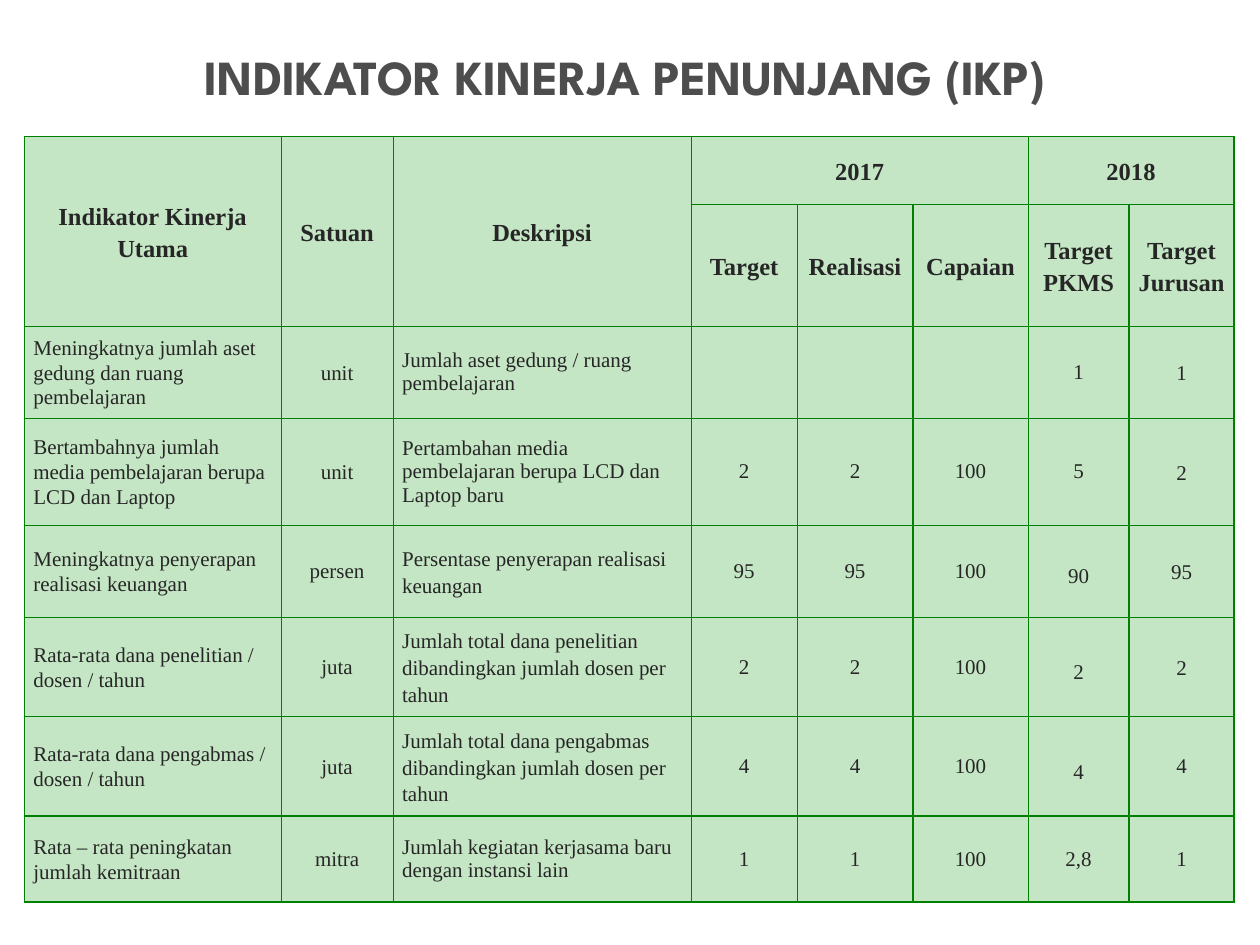
from dataclasses import dataclass

from lxml import etree
from pptx import Presentation
from pptx.dml.color import RGBColor
from pptx.enum.text import MSO_ANCHOR, PP_ALIGN
from pptx.oxml.ns import qn
from pptx.util import Pt

LEFT, CENTER = PP_ALIGN.LEFT, PP_ALIGN.CENTER
MIDDLE = MSO_ANCHOR.MIDDLE


@dataclass(frozen=True)
class Theme:
    """Colours, fonts and type sizes of the slide."""
    title_font: str = "League Spartan"
    table_font: str = "Times New Roman"
    title_color: str = "4D4D4D"
    text_color: str = "262626"
    cell_fill: str = "C5E6C5"
    border: str = "008001"
    title_size: int = 28
    header_size: int = 14
    body_size: int = 12


THEME = Theme()
TITLE_FORMAT = dict(name=THEME.title_font, size=Pt(THEME.title_size), bold=True)
HEADER_FORMAT = dict(name=THEME.table_font, size=Pt(THEME.header_size), bold=True)
BODY_FORMAT = dict(name=THEME.table_font, size=Pt(THEME.body_size), bold=False)

COL_WIDTHS = [146.8, 64, 170.3, 60.6, 66.2, 65.8, 57.7, 60]
ROW_HEIGHTS = [38.9, 69.7, 52.6, 61.1, 52.6, 57, 56.7, 49.1]
HEADERS = [
    ["Indikator Kinerja Utama", "Satuan", "Deskripsi", "2017", "", "", "2018", ""],
    ["", "", "", "Target", "Realisasi", "Capaian", "Target PKMS", "Target Jurusan"],
]
MERGES = [(0, 0, 1, 0), (0, 1, 1, 1), (0, 2, 1, 2), (0, 3, 0, 5), (0, 6, 0, 7)]
INDICATORS = [
    ["Meningkatnya jumlah aset gedung dan ruang pembelajaran", "unit",
     "Jumlah aset gedung / ruang pembelajaran", "", "", "", "1", "1"],
    ["Bertambahnya jumlah media pembelajaran berupa LCD dan Laptop", "unit",
     "Pertambahan media pembelajaran berupa LCD dan Laptop baru",
     "2", "2", "100", "5", "2"],
    ["Meningkatnya penyerapan realisasi keuangan", "persen",
     "Persentase penyerapan realisasi keuangan", "95", "95", "100", "90", "95"],
    ["Rata-rata dana penelitian / dosen / tahun", "juta",
     "Jumlah total dana penelitian dibandingkan jumlah dosen per tahun",
     "2", "2", "100", "2", "2"],
    ["Rata-rata dana pengabmas / dosen / tahun", "juta",
     "Jumlah total dana pengabmas dibandingkan jumlah dosen per tahun",
     "4", "4", "100", "4", "4"],
    ["Rata – rata peningkatan jumlah kemitraan", "mitra",
     "Jumlah kegiatan kerjasama baru dengan instansi lain",
     "1", "1", "100", "2,8", "1"],
]
HEADER_SPACING = [1.15] * 8
PLAIN, LOOSE = [1.07, 1.07, 1, 1, 1, 1, 1], [1.07, 1.07, 1.15, 1, 1, 1, 1.5]
BODY_SPACINGS = [PLAIN + [1.15], PLAIN + [1.15], LOOSE + [1.15],
                 LOOSE + [1.15], LOOSE + [1], PLAIN + [1]]


def set_attributes(obj, values):
    """Set each named attribute of an object."""
    for name, value in values.items():
        setattr(obj, name, value)


def write_text(tf, text, font_format, color, align, spacing=1):
    """Write one formatted paragraph into a text frame."""
    p = tf.paragraphs[0]
    set_attributes(p, dict(alignment=align, line_spacing=spacing))
    if text:
        r = p.add_run()
        r.text = text
        set_attributes(r.font, font_format)
        r.font.color.rgb = RGBColor.from_string(color)


def style_cell(cell):
    """Give a cell its margins, borders and fill."""
    set_attributes(cell, dict(margin_left=Pt(5.2), margin_right=Pt(5.2), margin_top=0,
                              margin_bottom=0, vertical_anchor=MIDDLE))
    tcPr = cell._tc.get_or_add_tcPr()
    for side in ("a:lnL", "a:lnR", "a:lnT", "a:lnB"):
        ln = etree.SubElement(tcPr, qn(side), w=str(Pt(0.75)))
        fill = etree.SubElement(ln, qn("a:solidFill"))
        etree.SubElement(fill, qn("a:srgbClr"), val=THEME.border)
    cell.fill.solid()
    cell.fill.fore_color.rgb = RGBColor.from_string(THEME.cell_fill)


def add_title(s, text):
    """Place and format the slide title."""
    sp = s.shapes.title
    set_attributes(sp, dict(left=Pt(20), top=Pt(12.2), width=Pt(674.6), height=Pt(62.6)))
    set_attributes(sp.text_frame, dict(word_wrap=True, vertical_anchor=MIDDLE))
    write_text(sp.text_frame, text, TITLE_FORMAT, THEME.title_color, CENTER)


def add_indicator_table(s):
    """Build the table of performance indicators."""
    rows = HEADERS + INDICATORS
    spacings = [HEADER_SPACING] * len(HEADERS) + BODY_SPACINGS
    table = s.shapes.add_table(len(rows), len(COL_WIDTHS), Pt(13.9), Pt(77.8),
                               Pt(sum(COL_WIDTHS)), Pt(sum(ROW_HEIGHTS))).table
    for col, width in zip(table.columns, COL_WIDTHS):
        col.width = Pt(width)
    for row, height in zip(table.rows, ROW_HEIGHTS):
        row.height = Pt(height)
    for i, texts in enumerate(rows):
        is_header = i < len(HEADERS)
        font_format = HEADER_FORMAT if is_header else BODY_FORMAT
        for j, text in enumerate(texts):
            cell = table.cell(i, j)
            style_cell(cell)
            align = LEFT if not is_header and j in (0, 2) else CENTER
            write_text(cell.text_frame, text, font_format, THEME.text_color,
                       align, spacings[i][j])
    for top, left, bottom, right in MERGES:
        table.cell(top, left).merge(table.cell(bottom, right))


def main():
    """Create the presentation with its single slide."""
    prs = Presentation()
    set_attributes(prs, dict(slide_width=Pt(720), slide_height=Pt(540)))
    s = prs.slides.add_slide(prs.slide_layouts[5])
    add_title(s, "INDIKATOR KINERJA PENUNJANG (IKP)")
    add_indicator_table(s)
    prs.save("out.pptx")


if __name__ == "__main__":
    main()
